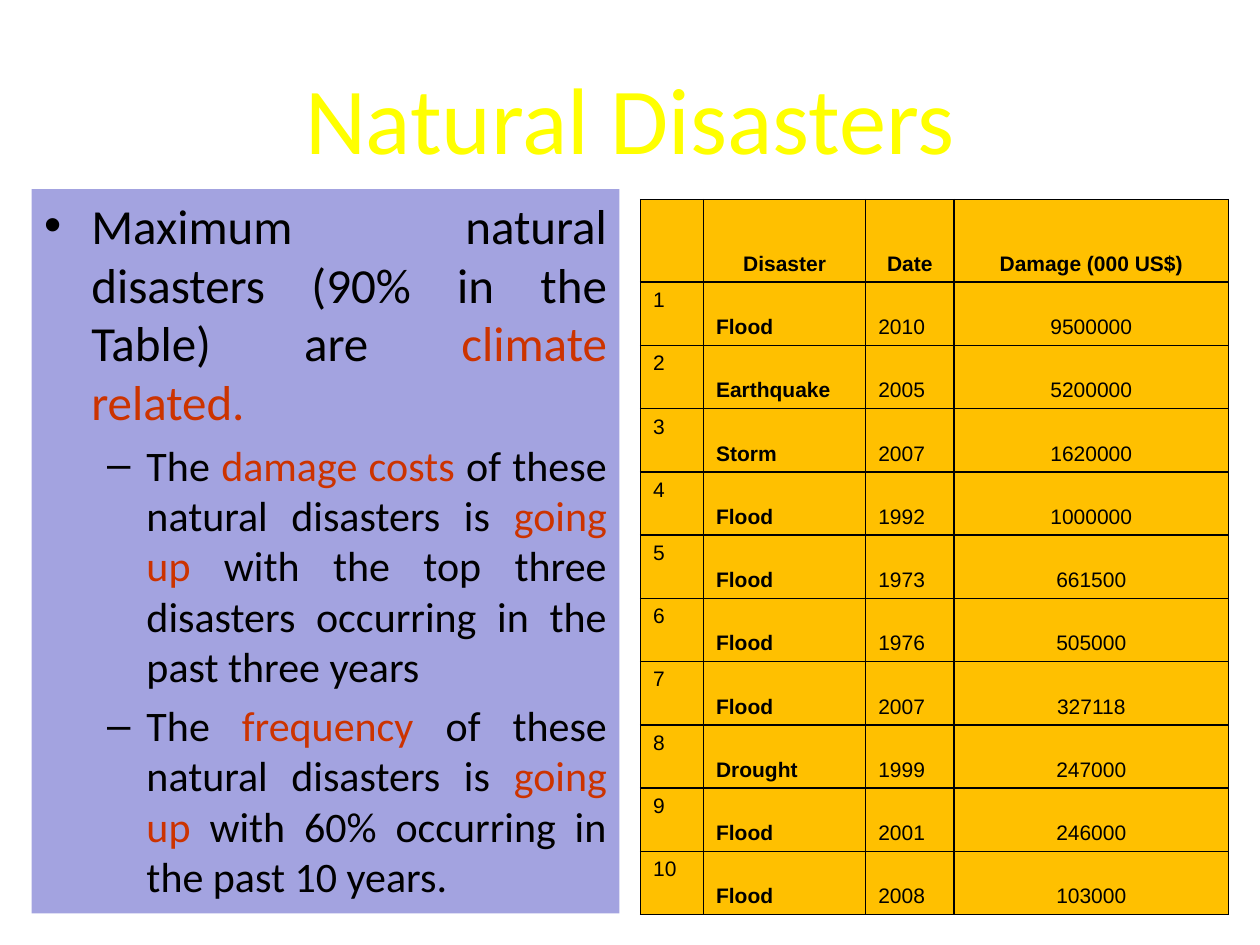
from lxml.etree import SubElement
from pptx import Presentation
from pptx.dml.color import RGBColor
from pptx.enum.text import MSO_ANCHOR as Anchor, MSO_AUTO_SIZE as AutoSize, PP_ALIGN as Align
from pptx.oxml.ns import qn
from pptx.util import Pt

BLACK = RGBColor(0x00, 0x00, 0x00)
YELLOW = RGBColor(0xFF, 0xFF, 0x00)
RED = RGBColor(0xCC, 0x33, 0x00)
LILAC = RGBColor(0xA3, 0xA3, 0xE0)
AMBER = RGBColor(0xFF, 0xC0, 0x00)

POINTS = [
    (0, 28, [("Maximum natural disasters (90% in the Table) are ", BLACK),
             ("climate related.", RED)]),
    (1, 24, [("The ", BLACK), ("damage costs", RED),
             (" of these natural disasters is ", BLACK), ("going up", RED),
             (" with the top three disasters occurring in the past three years", BLACK)]),
    (1, 24, [("The", BLACK), (" frequency ", RED),
             ("of these natural disasters is ", BLACK), ("going up", RED),
             (" with 60% occurring in the past 10 years.", BLACK)]),
]
HEADER = ("", "Disaster", "Date", "Damage (000 US$)")
DISASTERS = [
    ("Flood", 2010, 9500000),
    ("Earthquake", 2005, 5200000),
    ("Storm", 2007, 1620000),
    ("Flood", 1992, 1000000),
    ("Flood", 1973, 661500),
    ("Flood", 1976, 505000),
    ("Flood", 2007, 327118),
    ("Drought", 1999, 247000),
    ("Flood", 2001, 246000),
    ("Flood", 2008, 103000),
]
COLUMN_WIDTHS = (36, 92.7, 50.4, 157)
HEADER_HEIGHT, ROW_HEIGHT = 47.2, 36.15


def place(box, left, top, width, height):
    box.left, box.top, box.width, box.height = Pt(left), Pt(top), Pt(width), Pt(height)


def add_borders(cell):
    properties = cell._tc.get_or_add_tcPr()
    for side in ("lnL", "lnR", "lnT", "lnB"):
        line = SubElement(properties, qn(f"a:{side}"), w=str(Pt(1)))
        fill = SubElement(line, qn("a:solidFill"))
        SubElement(fill, qn("a:srgbClr"), val=str(BLACK))


prs = Presentation()
prs.slide_width, prs.slide_height = Pt(720), Pt(540)
slide = prs.slides.add_slide(prs.slide_layouts[1])

title = slide.shapes.title
place(title, 36, 21.6, 648, 90)
title.text_frame.text = "Natural Disasters"
heading = title.text_frame.paragraphs[0]
heading.font.size = Pt(54)
heading.font.name = "Calibri"
heading.font.color.rgb = YELLOW

body = slide.placeholders[1]
place(body, 18, 108, 336, 414)
body.fill.solid()
body.fill.fore_color.rgb = LILAC
points_frame = body.text_frame
points_frame.auto_size = AutoSize.NONE
for number, (level, size, pieces) in enumerate(POINTS):
    point = points_frame.add_paragraph() if number else points_frame.paragraphs[0]
    point.level = level
    point.alignment = Align.JUSTIFY
    if number == 0:
        point.space_before = Pt(0)
    point.font.size = Pt(size)
    point.font.name = "Calibri"
    for words, color in pieces:
        run = point.add_run()
        run.text = words
        run.font.color.rgb = color

rows = [HEADER] + [(rank, *disaster) for rank, disaster in enumerate(DISASTERS, 1)]
table = slide.shapes.add_table(
    len(rows), len(HEADER), Pt(366), Pt(114), Pt(sum(COLUMN_WIDTHS)),
    Pt(HEADER_HEIGHT + ROW_HEIGHT * len(DISASTERS))).table
for column, width in zip(table.columns, COLUMN_WIDTHS):
    column.width = Pt(width)
for r, values in enumerate(rows):
    table.rows[r].height = Pt(ROW_HEIGHT if r else HEADER_HEIGHT)
    for c, value in enumerate(values):
        cell = table.cell(r, c)
        add_borders(cell)
        cell.fill.solid()
        cell.fill.fore_color.rgb = AMBER
        cell.vertical_anchor = Anchor.BOTTOM if c else Anchor.TOP
        cell.text = str(value)
        entry = cell.text_frame.paragraphs[0]
        entry.alignment = Align.CENTER if r == 0 or c == 3 else Align.LEFT
        entry.font.size = Pt(12)
        entry.font.name = "Arial"
        entry.font.bold = r == 0 or c == 1
        entry.font.color.rgb = BLACK

prs.save("out.pptx")
